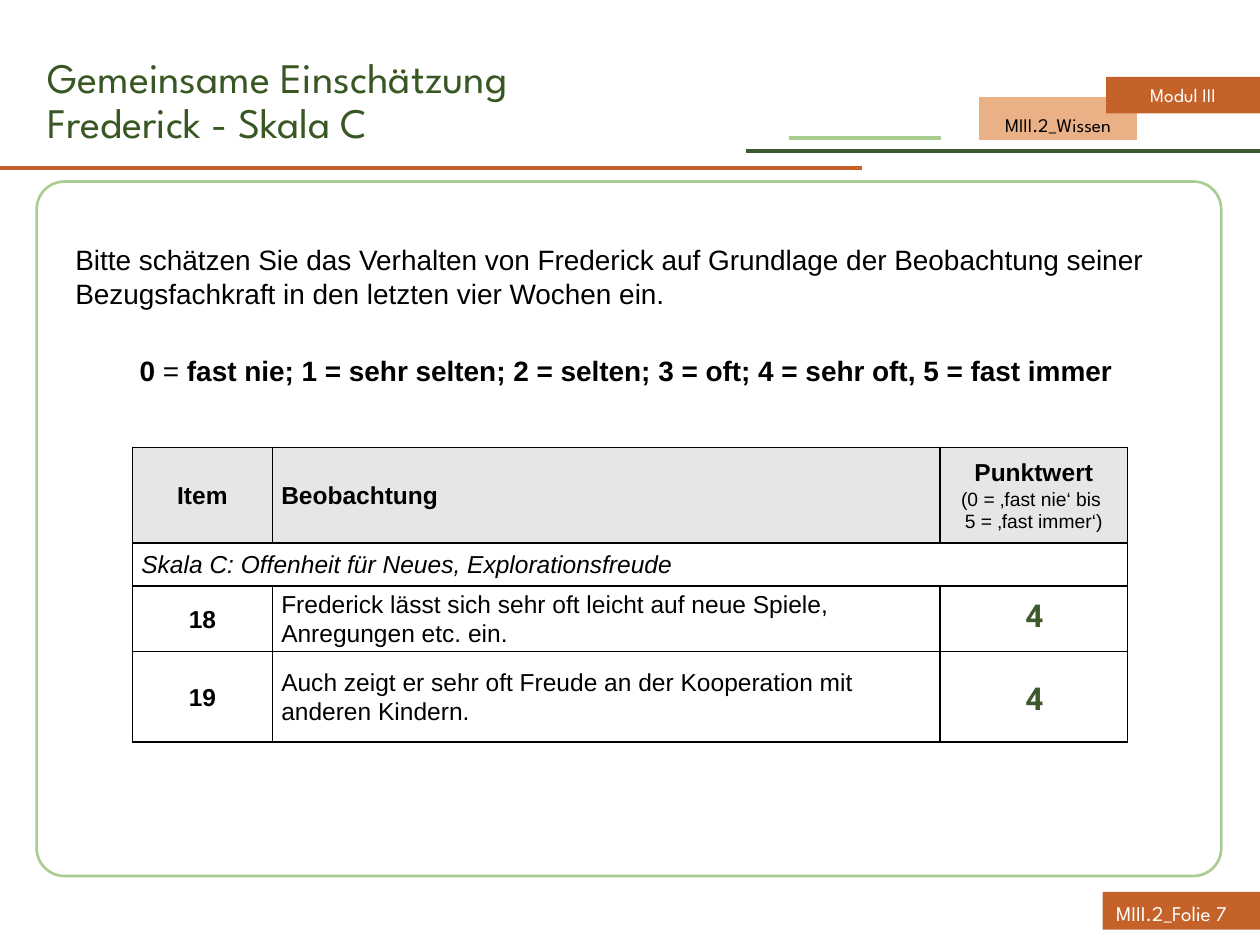
from copy import deepcopy

from lxml import etree
from pptx import Presentation
from pptx.dml.color import RGBColor
from pptx.enum.shapes import MSO_CONNECTOR, MSO_SHAPE
from pptx.enum.text import MSO_ANCHOR, PP_ALIGN
from pptx.oxml import parse_xml
from pptx.oxml.ns import nsdecls, qn
from pptx.util import Cm, Pt

LEFT, CENTER = PP_ALIGN.LEFT, PP_ALIGN.CENTER
TOP, MIDDLE = MSO_ANCHOR.TOP, MSO_ANCHOR.MIDDLE
RECT, ROUND_RECT = MSO_SHAPE.RECTANGLE, MSO_SHAPE.ROUNDED_RECTANGLE
STRAIGHT = MSO_CONNECTOR.STRAIGHT

COLORS = {
    "orange": "C46229", "peach": "EAB086", "dark": "3E5A2D", "light": "A9CD90",
    "title": "385723", "gray": "E7E6E6", "black": "000000", "white": "FFFFFF",
}
HEADING, BODY, SCORE = "League Spartan", "Arial", "Roboto"


def rgb(name):
    return RGBColor.from_string(COLORS[name])


class Deck:
    """Holds the style and the current slide."""

    def __init__(self, width, height):
        self.prs = Presentation()
        self.prs.slide_width, self.prs.slide_height = Cm(width), Cm(height)
        self.s = self.prs.slides.add_slide(self.prs.slide_layouts[6])

    def line(self, x1, x2, y, color):
        c = self.s.shapes.add_connector(STRAIGHT, Cm(x1), Cm(y), Cm(x2), Cm(y))
        c.line.color.rgb = rgb(color)
        c.line.width = Pt(2.25)
        etree.SubElement(c._element.spPr, qn("a:effectLst"))

    def shape(self, kind, x, y, w, h, fill=None, line=None):
        sp = self.s.shapes.add_shape(kind, Cm(x), Cm(y), Cm(w), Cm(h))
        sp.shadow.inherit = False
        if fill:
            sp.fill.solid()
            sp.fill.fore_color.rgb = rgb(fill)
        else:
            sp.fill.background()
        if line:
            sp.line.color.rgb = rgb(line)
            sp.line.width = Pt(1.5)
        else:
            sp.line.fill.background()
        return sp

    def box(self, x, y, w, h, anchor=TOP):
        tf = self.s.shapes.add_textbox(Cm(x), Cm(y), Cm(w), Cm(h)).text_frame
        tf.word_wrap = True
        tf.vertical_anchor = anchor
        return tf

    def run(self, p, text, size, font=BODY, color="black", bold=False, italic=False):
        """Adds a run; a newline becomes a line break of the same size."""
        for i, part in enumerate(text.split("\n")):
            if i:
                p.add_line_break()
                p._p[-1].append(deepcopy(r._r.rPr))
            r = p.add_run()
            r.text = part
            r.font.name, r.font.size = font, Pt(size)
            r.font.bold, r.font.italic = bold, italic
            r.font.color.rgb = rgb(color)

    def tag(self, x, y, w, h, fill, text, color, spacing=1.0):
        p = self.shape(RECT, x, y, w, h, fill).text_frame.paragraphs[0]
        p.alignment, p.line_spacing = CENTER, spacing
        self.run(p, text, 11, HEADING, color)

    def table(self, x, y, cols, rows):
        frame = self.s.shapes.add_table(len(rows), len(cols), Cm(x), Cm(y),
                                        Cm(sum(cols)), Cm(sum(rows)))
        t = frame.table
        t.first_row = t.horz_banding = False
        for col, w in zip(t.columns, cols):
            col.width = Cm(w)
        for row, h in zip(t.rows, rows):
            row.height = Cm(h)
        for i, row in enumerate(t.rows):
            for cell in row.cells:
                self.cell_style(cell, i)
        return t

    def cell_style(self, cell, row):
        cell.vertical_anchor = MIDDLE
        cell.margin_left = cell.margin_right = Cm(0.18)
        cell.margin_top = cell.margin_bottom = 0
        if row == 0:
            cell.fill.solid()
            cell.fill.fore_color.rgb = rgb("gray")
        else:
            cell.fill.background()
        # The rule between the header and the body is thicker
        thick = {0: "B", 1: "T"}.get(row)
        for i, side in enumerate("LRTB"):
            width = Pt(1.5 if side == thick else 1)
            cell._tc.get_or_add_tcPr().insert(i, parse_xml(
                f'<a:ln{side} {nsdecls("a")} w="{width}"><a:solidFill>'
                f'<a:srgbClr val="{COLORS["black"]}"/></a:solidFill></a:ln{side}>'))

    def cell_text(self, cell, align, *runs):
        p = cell.text_frame.paragraphs[0]
        p.alignment, p.line_spacing = align, 1.07
        p.space_before = p.space_after = Pt(3)
        for text, size, style in runs:
            self.run(p, text, size, **style)


def main():
    d = Deck(25.4, 19.05)
    bold = {"bold": True}

    # Frame, rules and tags
    d.line(0, 17.37, 3.38, "orange")
    d.line(15.04, 25.4, 3.05, "dark")
    d.line(15.9, 18.97, 2.79, "light")
    d.shape(ROUND_RECT, 0.74, 3.66, 23.88, 14, line="light").adjustments[0] = 0.04
    d.tag(19.74, 1.96, 3.18, 0.86, "peach", "MIII.2_Wissen", "black", 1.5)
    d.tag(22.3, 1.55, 3.1, 0.74, "orange", "Modul III", "white")
    d.shape(RECT, 22.23, 17.98, 3.17, 0.76, "orange")

    # Rating table
    t = d.table(2.67, 9.02, [2.82, 13.46, 3.78], [1.93, 0.86, 1.32, 1.83])
    d.cell_text(t.cell(0, 0), CENTER, ("Item", 14, bold))
    d.cell_text(t.cell(0, 1), LEFT, ("Beobachtung", 14, bold))
    d.cell_text(t.cell(0, 2), CENTER, ("Punktwert\n", 14, bold),
                ("(0 = ‚fast nie‘ bis \n5 = ‚fast immer‘)", 11, {}))
    t.cell(1, 0).merge(t.cell(1, 2))
    d.cell_text(t.cell(1, 0), LEFT,
                ("Skala C: Offenheit für Neues, Explorationsfreude", 14, {"italic": True}))
    items = [
        ("18", "Frederick lässt sich sehr oft leicht auf neue Spiele, Anregungen etc. ein."),
        ("19", "Auch zeigt er sehr oft Freude an der Kooperation mit anderen Kindern."),
    ]
    for i, (number, text) in enumerate(items, start=2):
        d.cell_text(t.cell(i, 0), CENTER, (number, 14, bold))
        d.cell_text(t.cell(i, 1), LEFT, (text, 14, {}))

    # Title
    p = d.box(0.71, 1.02, 21.89, 1.98).paragraphs[0]
    p.line_spacing = 0.9
    d.run(p, "Gemeinsame Einschätzung\nFrederick - Skala C", 24, HEADING, "title")

    # Instruction and scale
    tf = d.box(1.27, 4.06, 22.71, 4.95)
    tf.margin_top = Cm(0.84)
    d.run(tf.paragraphs[0], "Bitte schätzen Sie das Verhalten von Frederick auf Grundlage der "
          "Beobachtung seiner Bezugsfachkraft in den letzten vier Wochen ein.", 16)
    p = tf.add_paragraph()
    p.alignment, p.space_before = CENTER, Pt(25)
    d.run(p, "0", 16, bold=True)
    d.run(p, " =", 16)
    d.run(p, " fast nie; 1 = sehr selten; 2 = selten; 3 = oft; "
          "4 = sehr oft, 5 = fast immer", 16, bold=True)

    # Page label
    p = d.box(22.25, 17.9, 3.15, 1.02, MIDDLE).paragraphs[0]
    d.run(p, "MIII.2_Folie 7", 12, HEADING, "white")

    # Scores
    for y in (11.89, 13.56):
        d.run(d.box(20.42, y, 1.4, 1.8).paragraphs[0], "4", 18, SCORE, "dark", bold=True)

    d.prs.save("out.pptx")


if __name__ == "__main__":
    main()
